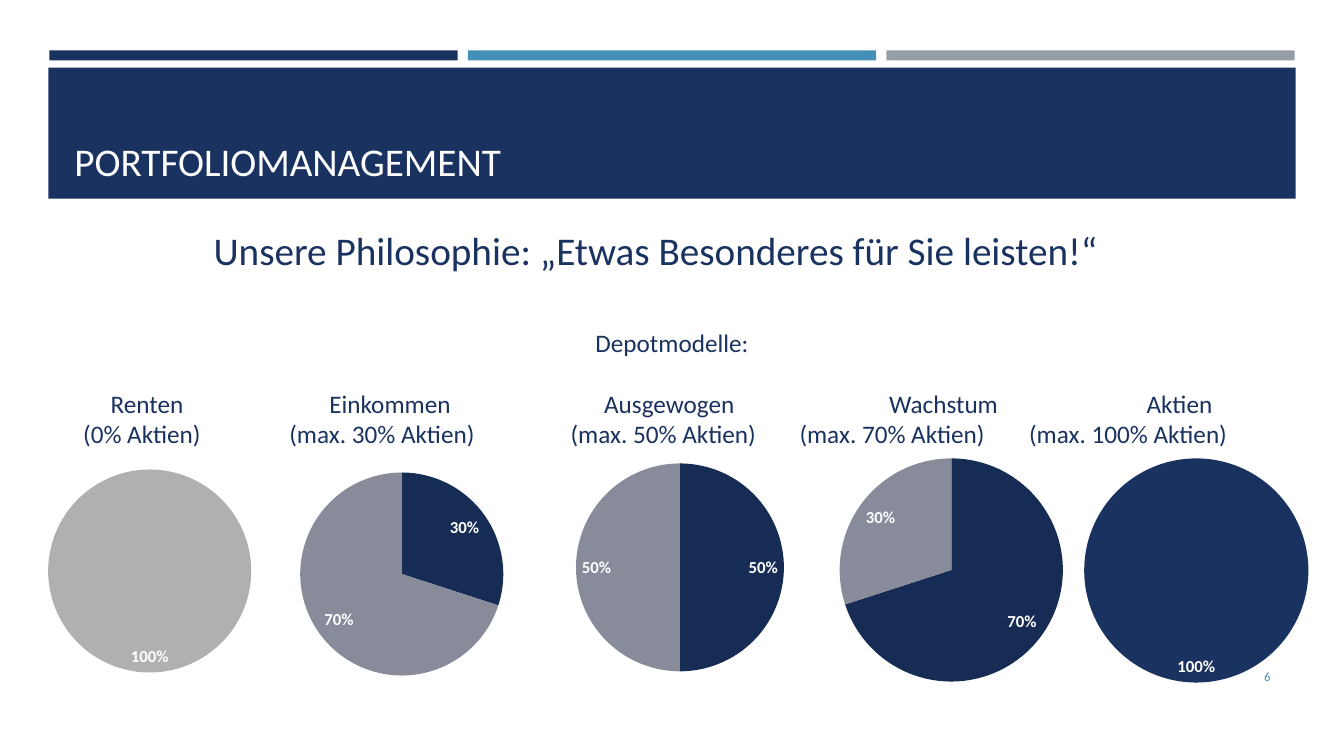
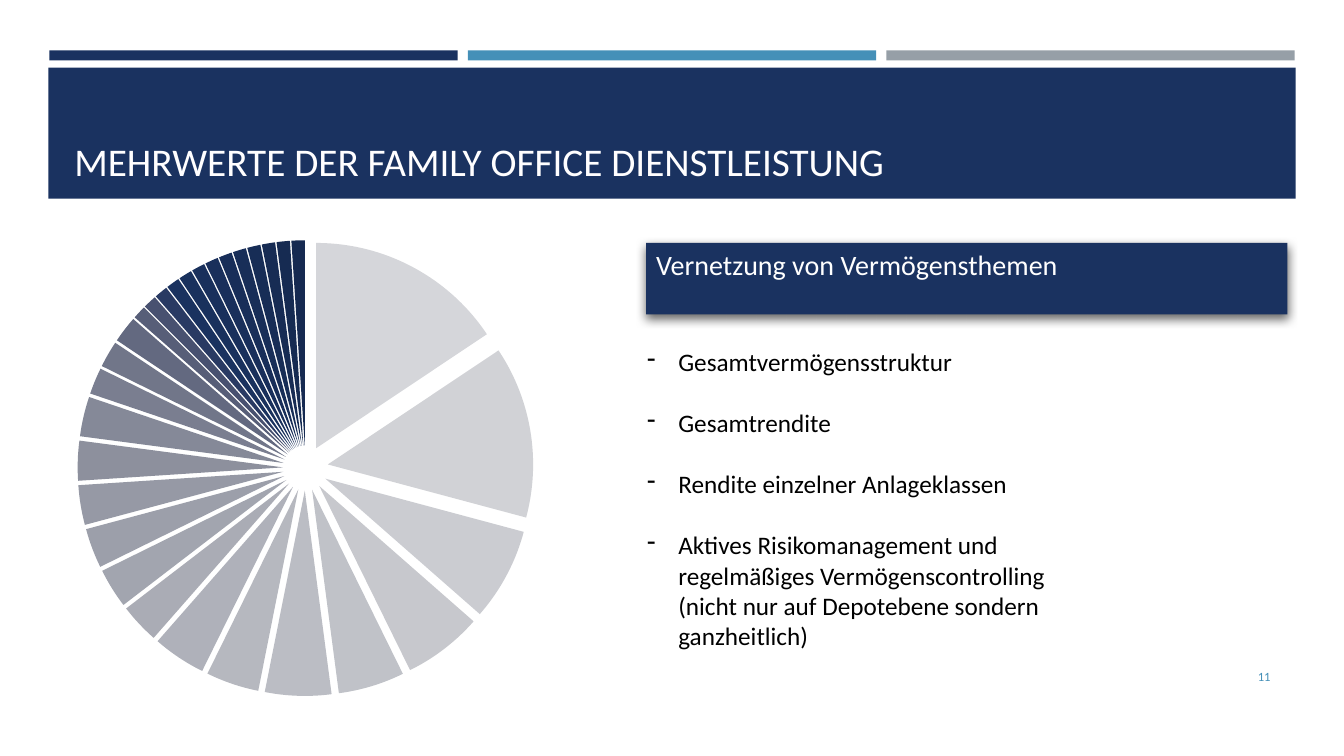
from dataclasses import dataclass
from typing import Optional, Sequence

from lxml import etree
from pptx import Presentation
from pptx import util as u
from pptx.chart.data import CategoryChartData
from pptx.dml.color import RGBColor
from pptx.enum import chart as charts, shapes, text
from pptx.oxml import parse_xml
from pptx.oxml.ns import nsdecls, qn

FONT = "Calibri"
COLOURS = {
    "navy": "1A3260",
    "blue": "4590B8",
    "grey": "969FA7",
    "title": "FFFEFF",
    "white": "FFFFFF",
    "black": "000000",
    "bonds": "B0B0B0",
    "stock_slice": "172C55",
    "bond_slice": "888B9A",
}
FAN_SHADES = (
    "D5D6DA D1D2D6 CBCCD1 C7C8CD C0C2C8 BBBDC4 B6B8BF AFB1BA AAACB5 A2A5AF "
    "9C9FAA 9699A5 8D909D 858998 7A7E90 717689 636980 575E78 485170 293A63 "
    "1A325F 19315D 19305C 192F5B 182E59 182E58 172D56 172C54 162B52 162A51 "
    "15294F 15284D 14274B 142649 132547 132445 122343 112240 11203E 101F3B"
).split()
FAN_VALUES = [15, 13, 7, 6, 5, 5, 4, 4] + [3] * 6 + [2] * 3 + [1] * 13 + [0] * 10


@dataclass(frozen=True)
class Frame:
    left: float
    top: float
    width: float
    height: float

    def lengths(self) -> tuple:
        return tuple(u.Inches(n) for n in (self.left, self.top, self.width, self.height))


@dataclass(frozen=True)
class Pie:
    frame: Frame
    values: Sequence[int]
    shades: Sequence[str]
    plot: Optional[Frame] = None
    explosion: int = 0
    labelled: bool = True


@dataclass(frozen=True)
class Model:
    name: str
    quota: str
    name_centre: float
    quota_centre: float
    pie: Pie


MIXED = (COLOURS["stock_slice"], COLOURS["bond_slice"])
MODELS = [
    Model("Renten", "(0% Aktien)", 1.46, 1.41,
          Pie(Frame(-0.43, 4.52, 3.83, 2.29), (0, 100), (COLOURS["navy"], COLOURS["bonds"]))),
    Model("Einkommen", "(max. 30% Aktien)", 3.87, 3.79,
          Pie(Frame(1.97, 4.55, 4.03, 2.29), (30, 70), MIXED)),
    Model("Ausgewogen", "(max. 50% Aktien)", 6.64, 6.58,
          Pie(Frame(4.19, 4.43, 4.54, 2.41), (50, 50), MIXED,
              plot=Frame(0.335, 0.07, 0.455, 0.856))),
    Model("Wachstum", "(max. 70% Aktien)", 9.36, 8.85,
          Pie(Frame(7.54, 4.41, 3.79, 2.49), (70, 30), MIXED)),
    Model("Aktien", "(max. 100% Aktien)", 11.7, 11.19,
          Pie(Frame(9.97, 4.41, 3.79, 2.5), (100, 0), (COLOURS["navy"], COLOURS["blue"]))),
]
FAN = Pie(Frame(0.77, 1.96, 6.11, 5.37), FAN_VALUES, FAN_SHADES,
          plot=Frame(0, 0.03, 0.74, 0.94), explosion=11, labelled=False)
BENEFITS = [
    "Gesamtvermögensstruktur",
    "Gesamtrendite",
    "Rendite einzelner Anlageklassen",
    "Aktives Risikomanagement und regelmäßiges Vermögenscontrolling "
    "(nicht nur auf Depotebene sondern ganzheitlich)",
]


def rgb(value: str) -> RGBColor:
    return RGBColor.from_string(value)


def style_font(font, size: float, colour: str, bold: bool = False) -> None:
    font.name = FONT
    font.size = u.Pt(size)
    font.bold = bold
    font.color.rgb = rgb(colour)


def write_lines(box, lines: Sequence[str], size: float, colour: str,
                align=text.PP_ALIGN.LEFT, anchor=text.MSO_ANCHOR.TOP) -> list:
    frame = box.text_frame
    frame.word_wrap = True
    frame.vertical_anchor = anchor
    frame.text = "\n".join(lines)
    for para in frame.paragraphs:
        para.alignment = align
        for span in para.runs:
            style_font(span.font, size, COLOURS[colour])
    return list(frame.paragraphs)


def add_text(page, frame: Frame, lines: Sequence[str], size: float, colour: str, **options) -> list:
    return write_lines(page.shapes.add_textbox(*frame.lengths()), lines, size, colour, **options)


def add_bar(page, frame: Frame, colour: str):
    bar = page.shapes.add_shape(shapes.MSO_SHAPE.RECTANGLE, *frame.lengths())
    bar.shadow.inherit = False
    bar.fill.solid()
    bar.fill.fore_color.rgb = rgb(COLOURS[colour])
    bar.line.fill.background()
    return bar


def cast_shadow(bar) -> None:
    effects = bar._element.spPr.find(qn("a:effectLst"))
    effects.append(parse_xml(
        f'<a:outerShdw {nsdecls("a")} blurRad="{u.Pt(7)}" dist="{u.Pt(3)}" dir="5040000" '
        f'rotWithShape="0"><a:srgbClr val="{COLOURS["black"]}"><a:alpha val="60000"/>'
        '</a:srgbClr></a:outerShdw>'))


def set_centre_tabs(para, centres: Sequence[float]) -> None:
    tabs = etree.SubElement(para._p.get_or_add_pPr(), qn("a:tabLst"))
    for centre in centres:
        etree.SubElement(tabs, qn("a:tab"), pos=str(u.Inches(centre - 0.1)), algn="ctr")


def set_dash(para) -> None:
    props = para._p.get_or_add_pPr()
    props.set("marL", str(u.Inches(0.31)))
    props.set("indent", str(u.Inches(-0.31)))
    etree.SubElement(props, qn("a:buChar"), char="-")


def set_plot(chart, plot: Frame) -> None:
    area = chart._chartSpace.chart.plotArea
    for old in area.findall(qn("c:layout")):
        area.remove(old)
    layout = etree.Element(qn("c:layout"))
    manual = etree.SubElement(layout, qn("c:manualLayout"))
    settings = {"layoutTarget": "inner", "xMode": "edge", "yMode": "edge",
                "x": plot.left, "y": plot.top, "w": plot.width, "h": plot.height}
    for tag, value in settings.items():
        etree.SubElement(manual, qn(f"c:{tag}"), val=str(value))
    area.insert(0, layout)


def explode(series, percent: int) -> None:
    points = series._element.findall(qn("c:dPt"))
    followers = [points[0]] + [point.find(qn("c:spPr")) for point in points]
    for follower in followers:
        mark = etree.Element(qn("c:explosion"), val=str(percent))
        follower.addprevious(mark)


def add_pie(page, pie: Pie) -> None:
    data = CategoryChartData()
    data.categories = [str(n) for n in range(1, len(pie.values) + 1)]
    data.add_series("Series 1", pie.values)
    chart = page.shapes.add_chart(charts.XL_CHART_TYPE.PIE, *pie.frame.lengths(), data).chart
    chart.has_title = False
    chart.has_legend = False
    style_font(chart.font, 10, COLOURS["black"])
    plot = chart.plots[0]
    plot.vary_by_categories = True
    series = plot.series[0]
    for index, shade in enumerate(pie.shades):
        look = series.points[index].format
        look.fill.solid()
        look.fill.fore_color.rgb = rgb(shade)
        look.line.fill.background()
    if pie.labelled:
        labels = series.data_labels
        labels.show_percentage = True
        labels.show_value = False
        labels.number_format = "0%;;"
        labels.number_format_is_linked = False
        labels.position = charts.XL_LABEL_POSITION.INSIDE_END
        style_font(labels.font, 12, COLOURS["white"], bold=True)
    if pie.explosion:
        explode(series, pie.explosion)
    if pie.plot:
        set_plot(chart, pie.plot)


def add_page(deck, title: str, number: int):
    page = deck.slides.add_slide(deck.slide_layouts[6])
    for index, colour in enumerate(("navy", "blue", "grey")):
        add_bar(page, Frame(0.49 + index * 4.15, 0.5, 4.05, 0.1), colour)
    add_bar(page, Frame(0.48, 0.67, 12.37, 1.3), "navy")
    add_text(page, Frame(0.64, 0.77, 12.06, 1.11), [title], 28, "title",
             anchor=text.MSO_ANCHOR.BOTTOM)
    add_text(page, Frame(11.55, 6.51, 1.15, 0.4), [str(number)], 9, "blue",
             align=text.PP_ALIGN.RIGHT, anchor=text.MSO_ANCHOR.MIDDLE)
    return page


def build_portfolio(deck) -> None:
    page = add_page(deck, "PORTFOLIOMANAGEMENT", 6)
    add_text(page, Frame(2.02, 2.2, 9.42, 0.57),
             ["Unsere Philosophie: „Etwas Besonderes für Sie leisten!“"], 28, "navy")
    names = "".join(f"\t{model.name}" for model in MODELS)
    quotas = "".join(f"\t{model.quota}" for model in MODELS)
    heading, name_row, quota_row = add_text(
        page, Frame(0, 3.2, 13.33, 1.31), ["Depotmodelle:", names, quotas], 18, "navy")
    heading.alignment = text.PP_ALIGN.CENTER
    name_row.space_before = u.Pt(22)
    set_centre_tabs(name_row, [model.name_centre for model in MODELS])
    set_centre_tabs(quota_row, [model.quota_centre for model in MODELS])
    for model in MODELS:
        add_pie(page, model.pie)


def build_benefits(deck) -> None:
    page = add_page(deck, "MEHRWERTE DER FAMILY OFFICE DIENSTLEISTUNG", 11)
    add_pie(page, FAN)
    paras = add_text(page, Frame(6.32, 3.39, 4.6, 3.13), BENEFITS, 18, "black")
    for index, para in enumerate(paras):
        if index:
            para.space_before = u.Pt(22)
        set_dash(para)
    banner = add_bar(page, Frame(6.41, 2.41, 6.36, 0.71), "navy")
    cast_shadow(banner)
    write_lines(banner, ["Vernetzung von Vermögensthemen"], 20, "white")


def main() -> None:
    deck = Presentation()
    deck.slide_width = u.Inches(13.33)
    deck.slide_height = u.Inches(7.5)
    build_portfolio(deck)
    build_benefits(deck)
    deck.save("out.pptx")


if __name__ == "__main__":
    main()
